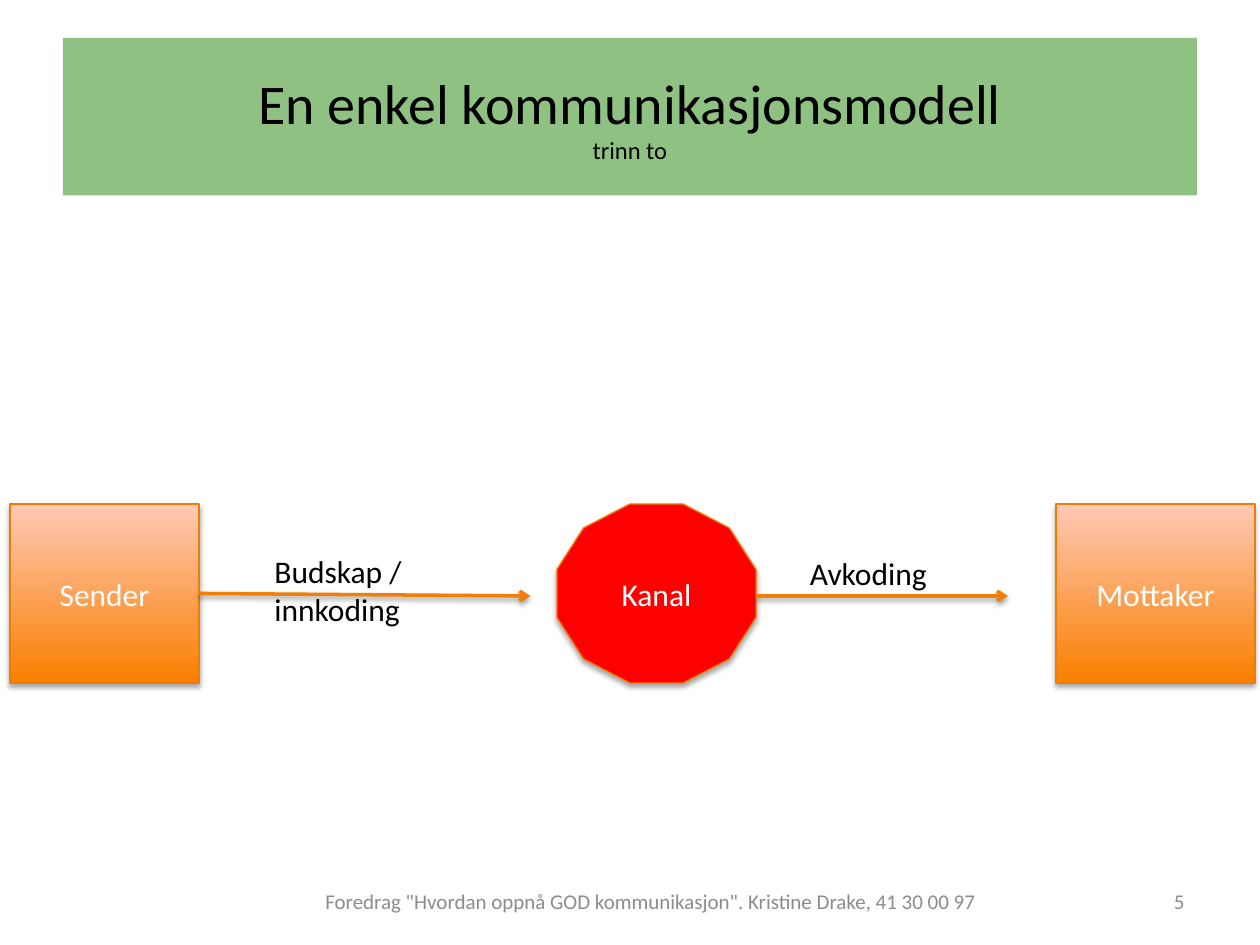
from lxml import etree
from pptx import Presentation
from pptx.dml.color import RGBColor
from pptx.enum.shapes import MSO_CONNECTOR, MSO_SHAPE
from pptx.enum.text import MSO_ANCHOR, MSO_AUTO_SIZE, PP_ALIGN
from pptx.oxml.ns import qn
from pptx.util import Inches, Pt

RECTANGLE, DODECAGON = MSO_SHAPE.RECTANGLE, MSO_SHAPE.DODECAGON
STRAIGHT = MSO_CONNECTOR.STRAIGHT
TOP, MIDDLE = MSO_ANCHOR.TOP, MSO_ANCHOR.MIDDLE
LEFT, CENTER, RIGHT = PP_ALIGN.LEFT, PP_ALIGN.CENTER, PP_ALIGN.RIGHT
FIT_SHAPE = MSO_AUTO_SIZE.SHAPE_TO_FIT_TEXT

FONT = "Calibri"
BLACK, WHITE, GRAY = "000000", "FFFFFF", "8C8C8C"
GREEN, RED = "8EC182", "FF0000"
ORANGE, PEACH = "F97F00", "FFC9B5"
OUTLINE, ARROW = "F07C03", "F07F09"
NODE_TOP, NODE_HEIGHT = 4, 1.42
FOOTER_TOP, FOOTER_HEIGHT = 6.95, 0.4


def color(hex_string):
    return RGBColor.from_string(hex_string)


def add_run(paragraph, text, size=18, fill=BLACK):
    run = paragraph.add_run()
    run.text = text
    run.font.name = FONT
    run.font.size = Pt(size)
    run.font.color.rgb = color(fill)


def write_text(shape, text, size=18, fill=BLACK, align=LEFT, anchor=TOP):
    """Format the shape's text frame and return its paragraph."""
    frame = shape.text_frame
    frame.word_wrap = True
    frame.vertical_anchor = anchor
    paragraph = frame.paragraphs[0]
    paragraph.alignment = align
    add_run(paragraph, text, size, fill)
    return paragraph


def add_shadow(properties, opacity, distance):
    """Put a soft downward shadow in the shape properties."""
    effects = properties.find(qn("a:effectLst"))
    if effects is None:
        effects = etree.SubElement(properties, qn("a:effectLst"))
    shadow = etree.SubElement(
        effects, qn("a:outerShdw"), blurRad=str(Pt(3.1)),
        dist=str(Pt(distance)), dir="5400000", rotWithShape="0")
    tint = etree.SubElement(shadow, qn("a:srgbClr"), val=BLACK)
    etree.SubElement(tint, qn("a:alpha"), val=str(opacity * 1000))


def add_title(slide, title, subtitle):
    banner = slide.shapes.add_shape(
        RECTANGLE, Inches(0.5), Inches(0.3), Inches(9), Inches(1.25))
    banner.shadow.inherit = False
    banner.fill.solid()
    banner.fill.fore_color.rgb = color(GREEN)
    banner.line.fill.background()
    paragraph = write_text(banner, title, size=32, align=CENTER, anchor=MIDDLE)
    paragraph.add_line_break()
    add_run(paragraph, subtitle, size=14)


def add_label(slide, text, left, top, width, height, grow=False, **text_format):
    box = slide.shapes.add_textbox(
        Inches(left), Inches(top), Inches(width), Inches(height))
    write_text(box, text, **text_format)
    if grow:
        box.text_frame.auto_size = FIT_SHAPE


def add_node(slide, text, left, width, kind=RECTANGLE, fill=None):
    """Add a step of the model, with a gradient unless a fill is given."""
    node = slide.shapes.add_shape(
        kind, Inches(left), Inches(NODE_TOP), Inches(width), Inches(NODE_HEIGHT))
    if fill:
        node.fill.solid()
        node.fill.fore_color.rgb = color(fill)
    else:
        node.fill.gradient()
        node.fill.gradient_angle = 90
        for stop, shade in zip(node.fill.gradient_stops, (ORANGE, PEACH)):
            stop.color.rgb = color(shade)
    node.line.color.rgb = color(OUTLINE)
    node.line.width = Pt(0.75)
    node.shadow.inherit = False
    add_shadow(node._element.spPr, opacity=35, distance=1.8)
    write_text(node, text, fill=WHITE, align=CENTER, anchor=MIDDLE)


def add_arrow(slide, start_x, start_y, end_x, end_y):
    arrow = slide.shapes.add_connector(
        STRAIGHT, Inches(start_x), Inches(start_y), Inches(end_x), Inches(end_y))
    arrow.line.color.rgb = color(ARROW)
    arrow.line.width = Pt(2)
    properties = arrow._element.spPr
    etree.SubElement(properties.find(qn("a:ln")), qn("a:tailEnd"), type="arrow")
    add_shadow(properties, opacity=38, distance=1.6)


def main():
    presentation = Presentation()
    presentation.slide_width = Inches(10)
    presentation.slide_height = Inches(7.5)
    slide = presentation.slides.add_slide(presentation.slide_layouts[6])

    add_title(slide, "En enkel kommunikasjonsmodell", "trinn to")
    footer_format = {"size": 12, "fill": GRAY, "anchor": MIDDLE}
    add_label(
        slide,
        'Foredrag "Hvordan oppnå GOD kommunikasjon". Kristine Drake, 41 30 00 97',
        2.33, FOOTER_TOP, 5.67, FOOTER_HEIGHT, align=CENTER, **footer_format)
    add_label(slide, "5", 8.58, FOOTER_TOP, 0.92, FOOTER_HEIGHT,
              align=RIGHT, **footer_format)

    add_node(slide, "Sender", 0.08, 1.5)
    add_node(slide, "Mottaker", 8.38, 1.58)
    add_node(slide, "Kanal", 4.42, 1.58, kind=DODECAGON, fill=RED)

    add_arrow(slide, 1.58, 4.71, 4.21, 4.73)
    add_label(slide, "Budskap / innkoding", 2.08, 4.33, 1.5, 0.71, grow=True)
    add_arrow(slide, 6, 4.73, 8, 4.73)
    add_label(slide, "Avkoding", 6.33, 4.35, 1.5, 0.4, grow=True)

    presentation.save("out.pptx")


if __name__ == "__main__":
    main()
